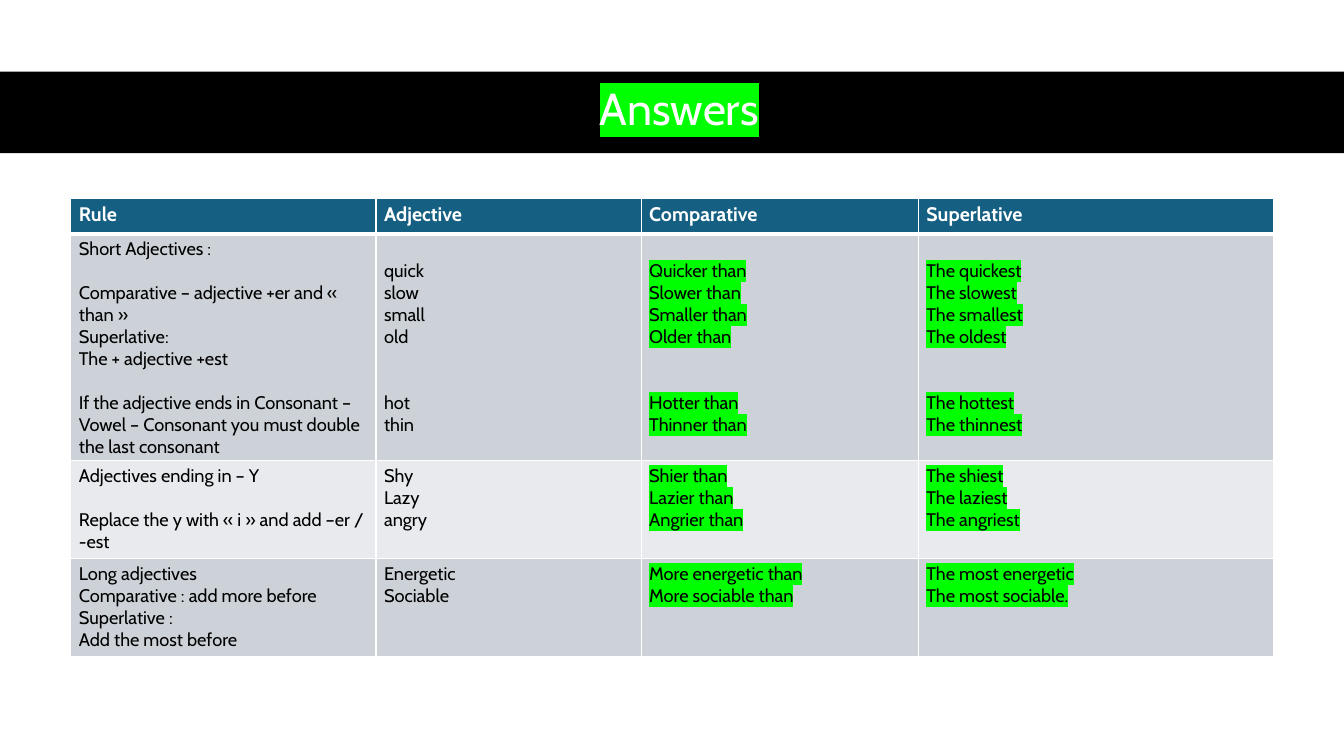
from lxml import etree
from pptx import Presentation
from pptx.dml.color import RGBColor
from pptx.enum.shapes import MSO_SHAPE
from pptx.enum.text import MSO_ANCHOR, PP_ALIGN
from pptx.oxml.ns import qn
from pptx.util import Pt

RECTANGLE = MSO_SHAPE.RECTANGLE
MIDDLE = MSO_ANCHOR.MIDDLE
CENTER = PP_ALIGN.CENTER

TITLE = "Answers"
HEADINGS = ["Rule", "Adjective", "Comparative", "Superlative"]
RULES = [
    [
        [(0, ["Short Adjectives :"]),
         (1, ["Comparative – adjective +er and « than »", "Superlative:", "The + adjective +est"]),
         (1, ["If the adjective ends in Consonant – Vowel – Consonant you must double the last consonant"])],
        [(1, ["quick", "slow", "small", "old"]), (2, ["hot", "thin"])],
        [(1, ["Quicker than", "Slower than", "Smaller than", "Older than"]),
         (2, ["Hotter than", "Thinner than"])],
        [(1, ["The quickest", "The slowest", "The smallest", "The oldest"]),
         (2, ["The hottest", "The thinnest"])],
    ],
    [
        [(0, ["Adjectives ending in – Y"]),
         (1, ["Replace the y with « i » and add –er / -est"])],
        [(0, ["Shy", "Lazy", "angry"])],
        [(0, ["Shier than", "Lazier than", "Angrier than"])],
        [(0, ["The shiest", "The laziest", "The angriest"])],
    ],
    [
        [(0, ["Long adjectives", "Comparative : add more before", "Superlative :", "Add the most before"])],
        [(0, ["Energetic", "Sociable"])],
        [(0, ["More energetic than", "More sociable than"])],
        [(0, ["The most energetic", "The most sociable."])],
    ],
]

THEME = {
    "font": "Cabin",
    "title_size": 32, "heading_size": 14, "body_size": 13,
    "white": "FFFFFF", "black": "000000", "highlight": "00FF00",
    "heading_fill": "156082", "row_fills": ["CCD2D8", "E8EAED"],
}
SLIDE_SIZE = (960, 540)
BAND_BOX = (0, 51.2, 960, 58.2)
TITLE_BOX = (43.9, 50.4, 882.7, 58.3)
TABLE_ORIGIN = (50.6, 141.8)
COLUMN_WIDTHS = [218, 189.4, 198, 254]
ROW_HEIGHTS = [25.2, 162, 69.8, 69.8]
INSET_X, INSET_Y = 5.8, 2.9
BLANK_LINE = 15.7
ANSWER_COLUMNS = (2, 3)
THIN, THICK = 1, 3


def points(values):
    return [Pt(value) for value in values]


def apply_format(target, formats):
    for name, value in formats.items():
        setattr(target, name, value)


def fill_with(target, color):
    target.fill.solid()
    target.fill.fore_color.rgb = RGBColor.from_string(color)


def write(paragraph, text, size, color, bold=False, highlighted=False):
    run = paragraph.add_run()
    run.text = text
    apply_format(run.font, {"size": Pt(size), "name": THEME["font"], "bold": bold})
    run.font.color.rgb = RGBColor.from_string(color)
    if highlighted:
        highlight = etree.Element(qn("a:highlight"))
        etree.SubElement(highlight, qn("a:srgbClr"), val=THEME["highlight"])
        run.font.fill._xPr.find(qn("a:solidFill")).addnext(highlight)


def set_borders(cell, top, bottom):
    properties = cell._tc.get_or_add_tcPr()
    widths = {"a:lnL": THIN, "a:lnR": THIN, "a:lnT": top, "a:lnB": bottom}
    for position, (side, width) in enumerate(widths.items()):
        border = etree.Element(qn(side), w=str(Pt(width)))
        border_fill = etree.SubElement(border, qn("a:solidFill"))
        etree.SubElement(border_fill, qn("a:srgbClr"), val=THEME["white"])
        properties.insert(position, border)


def write_cell(cell, groups, highlighted):
    cell.margin_top = Pt(INSET_Y + groups[0][0] * BLANK_LINE)
    frame = cell.text_frame
    for group_index, (blank_lines, lines) in enumerate(groups):
        for line_index, line in enumerate(lines):
            first = group_index == line_index == 0
            paragraph = frame.paragraphs[0] if first else frame.add_paragraph()
            if group_index and line_index == 0:
                paragraph.space_before = Pt(blank_lines * BLANK_LINE)
            write(paragraph, line, THEME["body_size"], THEME["black"], highlighted=highlighted)


def add_title(slide):
    band = slide.shapes.add_shape(RECTANGLE, *points(BAND_BOX))
    band.shadow.inherit = False
    fill_with(band, THEME["black"])
    band.line.fill.background()
    title = slide.shapes.add_textbox(*points(TITLE_BOX)).text_frame
    apply_format(title, {"word_wrap": True, "vertical_anchor": MIDDLE})
    apply_format(title.paragraphs[0], {"alignment": CENTER, "line_spacing": 0.9})
    write(title.paragraphs[0], TITLE, THEME["title_size"], THEME["white"], highlighted=True)


def add_rules(slide):
    table = slide.shapes.add_table(
        len(ROW_HEIGHTS), len(COLUMN_WIDTHS), *points(TABLE_ORIGIN),
        Pt(sum(COLUMN_WIDTHS)), Pt(sum(ROW_HEIGHTS))).table
    for column, width in zip(table.columns, COLUMN_WIDTHS):
        column.width = Pt(width)
    for row_index, height in enumerate(ROW_HEIGHTS):
        table.rows[row_index].height = Pt(height)
        for column_index, heading in enumerate(HEADINGS):
            cell = table.cell(row_index, column_index)
            apply_format(cell, {
                "margin_left": Pt(INSET_X), "margin_right": Pt(INSET_X),
                "margin_top": Pt(INSET_Y), "margin_bottom": Pt(INSET_Y)})
            if row_index == 0:
                fill_with(cell, THEME["heading_fill"])
                write(cell.text_frame.paragraphs[0], heading,
                      THEME["heading_size"], THEME["white"], bold=True)
            else:
                fill_with(cell, THEME["row_fills"][(row_index - 1) % 2])
                write_cell(cell, RULES[row_index - 1][column_index], column_index in ANSWER_COLUMNS)
            set_borders(cell, THICK if row_index == 1 else THIN, THICK if row_index == 0 else THIN)


def main():
    presentation = Presentation()
    presentation.slide_width, presentation.slide_height = points(SLIDE_SIZE)
    slide = presentation.slides.add_slide(presentation.slide_layouts[6])
    add_title(slide)
    add_rules(slide)
    presentation.save("out.pptx")


if __name__ == "__main__":
    main()
